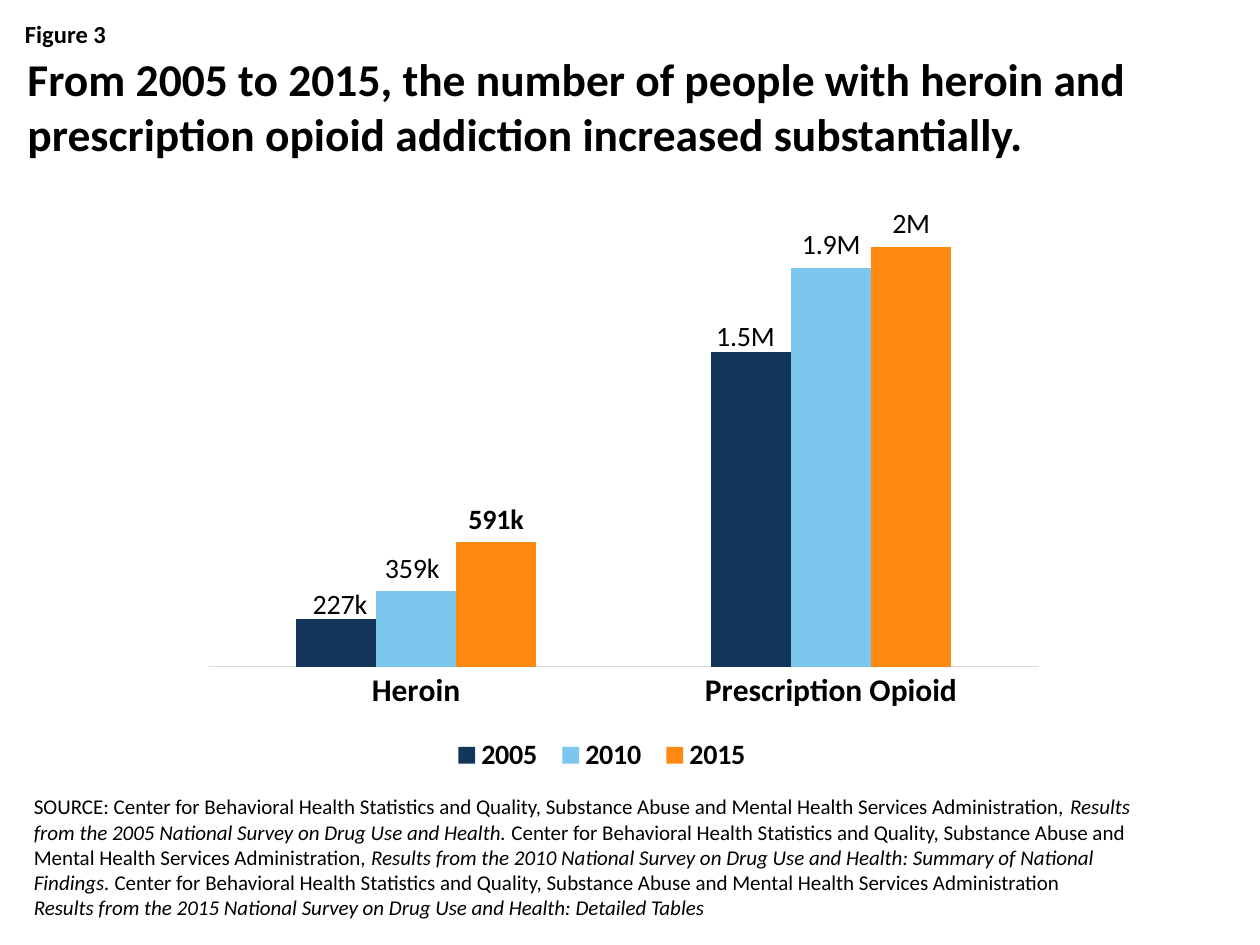
"""Build a slide with a clustered column chart on opioid addiction, 2005 to 2015."""
from lxml import etree
from pptx import Presentation
from pptx import util as u
from pptx.chart.data import CategoryChartData
from pptx.dml.color import RGBColor
from pptx.enum import chart as ch, text
from pptx.oxml import ns

FONT = "Calibri"
COLORS = {"black": "000000", "axis": "D9D9D9",
          "2005": "133559", "2010": "7BC7ED", "2015": "FF8811"}
CATEGORIES = ["Heroin", "Prescription Opioid"]
SERIES = {"2005": [227000, 1500000],
          "2010": [359000, 1900000],
          "2015": [591000, 2000000]}
LABELS = {"2005": ["227k", "1.5M"], "2010": ["359k", "1.9M"], "2015": ["591k", "2M"]}
BOLD_LABEL = "591k"
LABEL_SHIFTS = {"227k": (0.004, 0.012), "1.5M": (-0.006, 0.011), "359k": (-0.004, 0)}

TITLE = ("From 2005 to 2015, the number of people with heroin and "
         "prescription opioid addiction increased substantially.")
CENTER = ("Center for Behavioral Health Statistics and Quality, "
          "Substance Abuse and Mental Health Services Administration")
SOURCE = [
    [("SOURCE: " + CENTER + ", ", False),
     ("Results from the 2005 National Survey on Drug Use and Health. ", True),
     (CENTER + ", ", False),
     ("Results from the 2010 National Survey on Drug Use and Health: "
      "Summary of National Findings. ", True),
     (CENTER, False)],
    [("Results from the 2015 National Survey on Drug Use and Health: Detailed Tables", True)],
]


def rgb(name):
    """Return the named colour."""
    return RGBColor.from_string(COLORS[name])


def style_font(font, size, bold=False, italic=False):
    """Set the face, size, weight and colour of a font."""
    font.name, font.size = FONT, u.Pt(size)
    font.bold, font.italic = bold, italic
    font.color.rgb = rgb("black")


def add_text(s, box, paragraphs, size, bold=False, anchor=text.MSO_ANCHOR.TOP):
    """Add a wrapped text box from paragraphs of (text, italic) runs."""
    tf = s.shapes.add_textbox(*map(u.Inches, box)).text_frame
    tf.word_wrap = True
    tf.vertical_anchor = anchor
    for i, runs in enumerate(paragraphs):
        p = tf.paragraphs[0] if i == 0 else tf.add_paragraph()
        for content, italic in runs:
            r = p.add_run()
            r.text = content
            style_font(r.font, size, bold, italic)


def set_layout(parent, index, **values):
    """Give a chart part a manual layout at the given child index."""
    for old in parent.findall(ns.qn("c:layout")):
        parent.remove(old)
    layout = etree.Element(ns.qn("c:layout"))
    manual = etree.SubElement(layout, ns.qn("c:manualLayout"))
    for tag, value in values.items():
        etree.SubElement(manual, ns.qn("c:" + tag)).set("val", str(value))
    parent.insert(index, layout)


def label_point(series, index, label):
    """Put a text label above one column."""
    data_label = series.points[index].data_label
    r = data_label.text_frame.paragraphs[0].add_run()
    r.text = label
    style_font(r.font, 16, label == BOLD_LABEL)
    data_label.position = ch.XL_LABEL_POSITION.OUTSIDE_END
    if label in LABEL_SHIFTS:
        x, y = LABEL_SHIFTS[label]
        element = series._element.xpath("c:dLbls/c:dLbl")[index]
        set_layout(element, 1, x=x, y=y)


def style_axes(chart):
    """Show the category axis and hide the value axis."""
    axis = chart.category_axis
    axis.major_tick_mark = ch.XL_TICK_MARK.NONE
    axis.format.line.color.rgb = rgb("axis")
    axis.format.line.width = u.Pt(0.75)
    style_font(axis.tick_labels.font, 18, True)
    axis = chart.value_axis
    axis.minimum_scale, axis.maximum_scale = 0, 2500000
    axis.has_major_gridlines = False
    axis.visible = False


def add_column_chart(s, box):
    """Add the clustered columns with their labels and legend."""
    data = CategoryChartData(number_format="#,##0")
    data.categories = CATEGORIES
    for name, values in SERIES.items():
        data.add_series(name, values)
    chart = s.shapes.add_chart(
        ch.XL_CHART_TYPE.COLUMN_CLUSTERED, *map(u.Inches, box), data).chart
    chart.has_title = False
    style_font(chart.font, 10)
    style_axes(chart)

    plot = chart.plots[0]
    plot.gap_width, plot.overlap, plot.vary_by_categories = 219, 0, False
    for series in plot.series:
        series.format.fill.solid()
        series.format.fill.fore_color.rgb = rgb(series.name)
        series.data_labels.show_value = True
        style_font(series.data_labels.font, 16)
        for i, label in enumerate(LABELS[series.name]):
            label_point(series, i, label)

    chart.has_legend = True
    chart.legend.position = ch.XL_LEGEND_POSITION.BOTTOM
    chart.legend.include_in_layout = False
    style_font(chart.legend.font, 16, True)
    set_layout(chart.legend._element, 1, xMode="edge", yMode="edge",
               x=0.36, y=0.92, w=0.33, h=0.07)
    plot_area = chart._chartSpace.xpath("c:chart/c:plotArea")[0]
    set_layout(plot_area, 0, layoutTarget="inner", xMode="edge", yMode="edge",
               x=0.118, y=0.096, w=0.859, h=0.735)


def main():
    """Build and save the slide."""
    prs = Presentation()
    prs.slide_width, prs.slide_height = u.Inches(10), u.Inches(7.5)
    s = prs.slides.add_slide(prs.slide_layouts[6])
    add_text(s, (0.1, 0.1, 9.8, 0.34), [[("Figure 3", False)]], 14, bold=True)
    add_text(s, (0.17, 6.58, 8.98, 0.77), SOURCE, 12, anchor=text.MSO_ANCHOR.BOTTOM)
    add_text(s, (0.12, 0.36, 9.8, 1), [[(TITLE, False)]], 26, bold=True)
    add_column_chart(s, (0.75, 0.58, 7.67, 5.67))
    prs.save("out.pptx")


if __name__ == "__main__":
    main()
